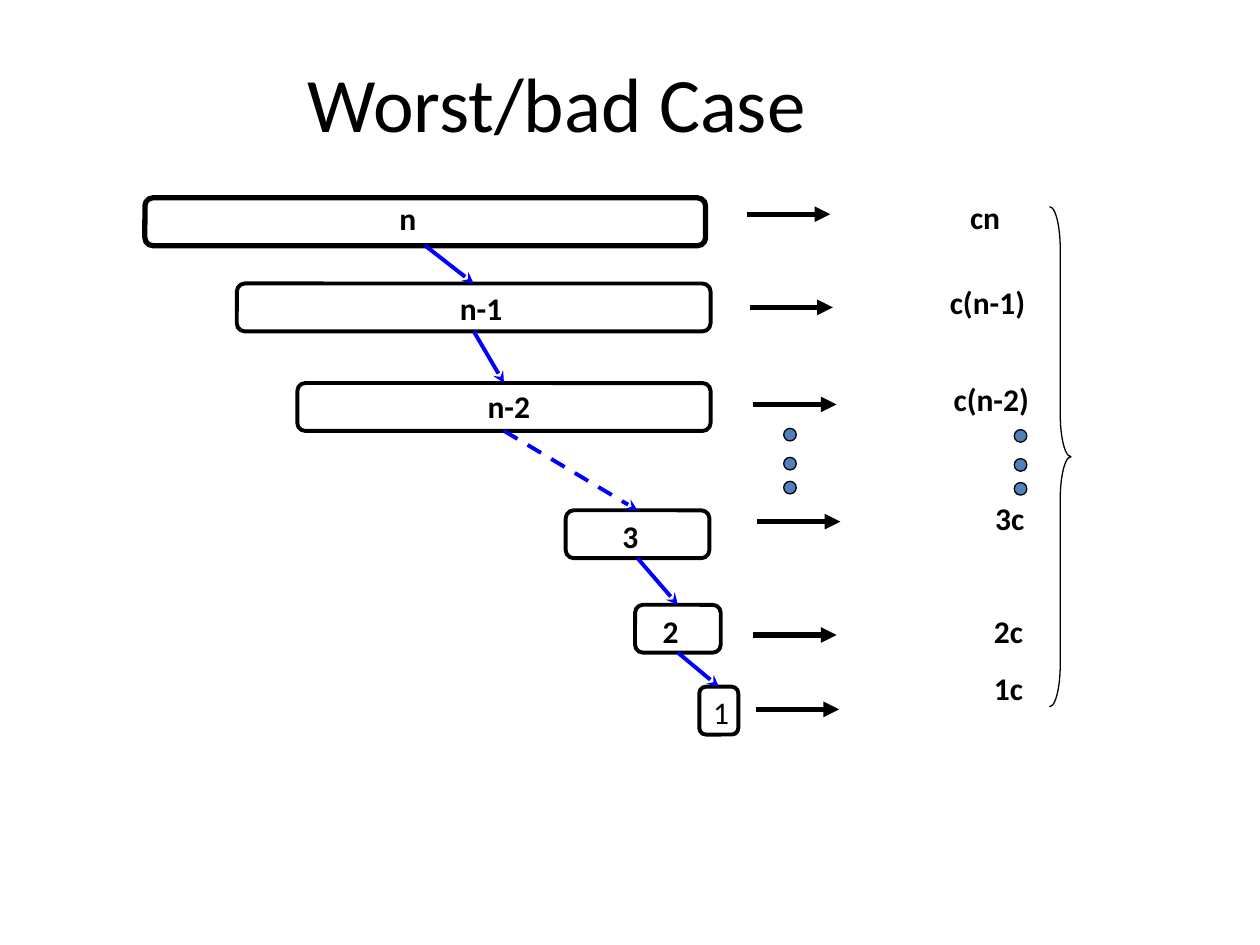
from dataclasses import dataclass

from pptx import Presentation
from pptx.dml.color import RGBColor
from pptx.enum.dml import MSO_LINE
from pptx.enum.shapes import MSO_CONNECTOR, MSO_SHAPE
from pptx.enum.text import MSO_ANCHOR, PP_ALIGN
from pptx.oxml.ns import qn
from pptx.util import Inches, Pt
from lxml.etree import SubElement


@dataclass(frozen=True)
class Theme:
    font: str = "Calibri"
    ink: RGBColor = RGBColor(0x00, 0x00, 0x00)
    call: RGBColor = RGBColor(0x00, 0x00, 0xFF)
    dot: RGBColor = RGBColor(0x4F, 0x81, 0xBD)
    title: float = 44
    body: float = 18
    thin: float = 0.75
    medium: float = 2.25
    thick: float = 3


class Builder:
    def __init__(self, slide, theme):
        self.s = slide
        self.t = theme

    def shape(self, kind, x, y, w, h, weight, fill=None):
        sp = self.s.shapes.add_shape(kind, Inches(x), Inches(y), Inches(w), Inches(h))
        sp.shadow.inherit = False
        if fill is None:
            sp.fill.background()
        else:
            sp.fill.solid()
            sp.fill.fore_color.rgb = fill
        sp.line.color.rgb = self.t.ink
        sp.line.width = Pt(weight)
        return sp

    def text(self, text, x, y, w, h, size, bold=True, inset=True, wrap=True,
             align=PP_ALIGN.LEFT, anchor=MSO_ANCHOR.TOP):
        tf = self.s.shapes.add_textbox(Inches(x), Inches(y), Inches(w), Inches(h)).text_frame
        tf.word_wrap = wrap
        tf.vertical_anchor = anchor
        if not inset:
            tf.margin_left = tf.margin_right = tf.margin_top = tf.margin_bottom = 0
        p = tf.paragraphs[0]
        p.text = text
        p.alignment = align
        p.font.name = self.t.font
        p.font.size = Pt(size)
        p.font.bold = bold
        p.font.color.rgb = self.t.ink

    def arrow(self, x1, y1, x2, y2, color, weight, head):
        c = self.s.shapes.add_connector(MSO_CONNECTOR.STRAIGHT, Inches(x1), Inches(y1),
                                        Inches(x2), Inches(y2))
        c.line.color.rgb = color
        c.line.width = Pt(weight)
        SubElement(c.line._get_or_add_ln(), qn("a:tailEnd"), type=head)
        SubElement(c._element.spPr, qn("a:effectLst"))
        return c

    def call(self, parent, child, dashed=False):
        c = self.arrow(0, 0, 1, 1, self.t.call, self.t.medium, "stealth")
        c.begin_connect(parent, 2)
        c.end_connect(child, 0)
        if dashed:
            c.line.dash_style = MSO_LINE.DASH

    def dots(self, x, y):
        for offset in (0, 0.23, 0.42):
            self.shape(MSO_SHAPE.OVAL, x, y + offset, 0.1, 0.1, self.t.thin, self.t.dot)


BAR_H, ARROW_W = 0.38, 0.66

# Bars: left, top, width, label, label left, label top
BARS = [
    (1.15, 1.57, 4.45, "n", 3.17, 1.58),
    (1.88, 2.25, 3.76, "n-1", 3.65, 2.29),
    (2.36, 3.04, 3.28, "n-2", 3.87, 3.07),
    (4.49, 4.05, 1.14, "3", 4.94, 4.10),
    (5.04, 4.80, 0.68, "2", 5.26, 4.86),
    (5.55, 5.45, 0.31, "1", 5.66, 5.50),
]

# Costs: arrow left, arrow y, cost, cost left, cost top, cost width
COSTS = [
    (5.93, 1.70, "cn", 7.60, 1.52, 0.48),
    (5.95, 2.44, "c(n-1)", 7.44, 2.20, 0.89),
    (5.98, 3.21, "c(n-2)", 7.47, 2.97, 0.89),
    (6.01, 4.14, "3c", 7.80, 3.91, 0.48),
    (5.98, 5.04, "2c", 7.79, 4.81, 0.48),
    (6.00, 5.63, "1c", 7.79, 5.26, 0.48),
]


def main():
    prs = Presentation()
    prs.slide_width, prs.slide_height = Inches(10), Inches(7.5)
    t = Theme()
    b = Builder(prs.slides.add_slide(prs.slide_layouts[6]), t)

    # Title
    b.text("Worst/bad Case", 0.28, 0.3, 8.28, 0.92, t.title, bold=False,
           align=PP_ALIGN.CENTER, anchor=MSO_ANCHOR.BOTTOM)

    # Shrinking subproblems
    bars = []
    for i, (x, y, w, label, label_x, label_y) in enumerate(BARS):
        weight = t.medium if i else t.thick
        bars.append(b.shape(MSO_SHAPE.ROUNDED_RECTANGLE, x, y, w, BAR_H, weight))
        b.text(label, label_x, label_y, 0.56, 0.3, t.body, bold=label != "1", inset=False)

    # Recursive calls, dashed where levels are skipped
    for i, (parent, child) in enumerate(zip(bars, bars[1:])):
        b.call(parent, child, dashed=i == 2)

    # Cost of each level
    for x, y, cost, cost_x, cost_y, cost_w in COSTS:
        b.arrow(x, y, x + ARROW_W, y, t.ink, t.thick, "triangle")
        b.text(cost, cost_x, cost_y, cost_w, 0.4, t.body, wrap=False)

    # Skipped levels
    b.dots(6.22, 3.4)
    b.dots(8.05, 3.41)

    # Brace around all costs
    brace = b.shape(MSO_SHAPE.RIGHT_BRACE, 8.33, 1.64, 0.17, 3.97, t.thin)
    brace.adjustments[0] = 1.98

    prs.save("out.pptx")


if __name__ == "__main__":
    main()
